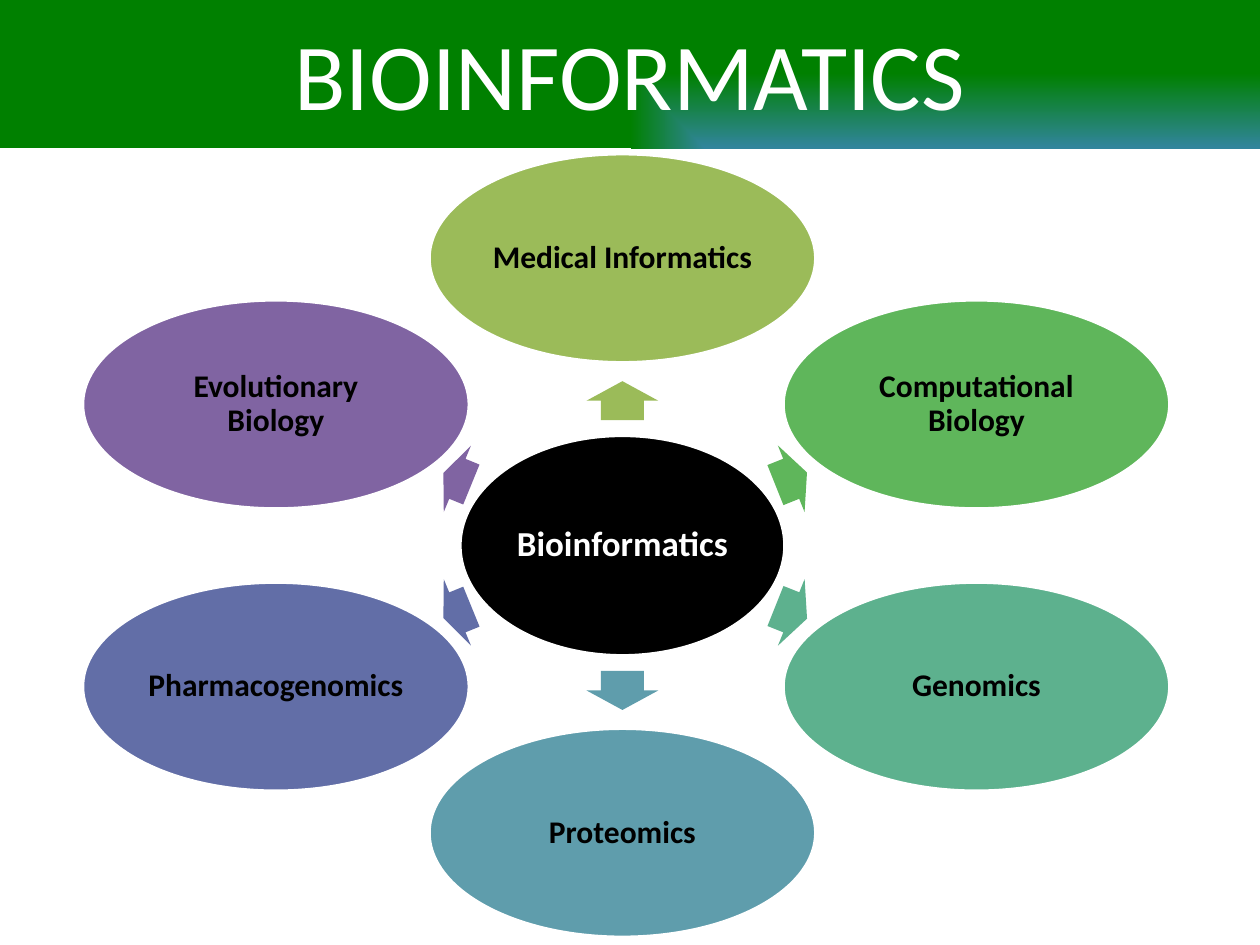
from dataclasses import dataclass

from lxml import etree
from pptx import Presentation
from pptx.dml.color import RGBColor
from pptx.enum.shapes import MSO_SHAPE
from pptx.enum.text import MSO_ANCHOR, PP_ALIGN
from pptx.oxml.ns import qn
from pptx.util import Inches, Pt

RECTANGLE = MSO_SHAPE.RECTANGLE
OVAL = MSO_SHAPE.OVAL
RIGHT_ARROW = MSO_SHAPE.RIGHT_ARROW
CENTER = PP_ALIGN.CENTER
MIDDLE = MSO_ANCHOR.MIDDLE


@dataclass(frozen=True)
class Theme:
    font: str = "Calibri"
    light: str = "FFFFFF"
    dark: str = "000000"
    banner_start: str = "31859C"
    banner_end: str = "008000"
    lime: str = "9BBB59"
    green: str = "5FB65B"
    mint: str = "5DB18E"
    teal: str = "5F9DAC"
    indigo: str = "626EA7"
    purple: str = "8064A2"
    title_size: int = 54
    hub_size: int = 20
    topic_size: int = 18
    outline: int = 2


class RadialSlide:
    """Draws a banner and a radial diagram on one slide in a shared theme."""

    def __init__(self, slide, theme):
        self.slide = slide
        self.theme = theme

    def shape(self, kind, center, size, color=None):
        left, top = (c - s / 2 for c, s in zip(center, size))
        shape = self.slide.shapes.add_shape(
            kind, Inches(left), Inches(top), Inches(size[0]), Inches(size[1]))
        shape.shadow.inherit = False
        shape.line.fill.background()
        if color:
            shape.fill.solid()
            shape.fill.fore_color.rgb = RGBColor.from_string(color)
        return shape

    def label(self, shape, text, size, color, bold=False):
        frame = shape.text_frame
        frame.text = text
        frame.word_wrap = True
        frame.vertical_anchor = MIDDLE
        paragraph = frame.paragraphs[0]
        paragraph.alignment = CENTER
        font = paragraph.runs[0].font
        font.name = self.theme.font
        font.size = Pt(size)
        font.bold = bold
        font.color.rgb = RGBColor.from_string(color)

    def banner(self, text, center, size):
        theme = self.theme
        banner = self.shape(RECTANGLE, center, size)
        banner.fill.gradient()
        colors = (theme.banner_start, theme.banner_end)
        for stop, color in zip(banner.fill.gradient_stops, colors):
            stop.color.rgb = RGBColor.from_string(color)
        gradient = banner._element.spPr.find(qn("a:gradFill"))
        gradient.remove(gradient.find(qn("a:lin")))
        corner = etree.SubElement(gradient, qn("a:path"), {"path": "rect"})
        etree.SubElement(corner, qn("a:fillToRect"), l="100000", t="100000")
        etree.SubElement(gradient, qn("a:tileRect"), r="-100000", b="-100000")
        self.label(banner, text, theme.title_size, theme.light)

    def bubble(self, text, center, size, fill, text_size, text_color):
        bubble = self.shape(OVAL, center, size, fill)
        bubble.line.color.rgb = RGBColor.from_string(self.theme.light)
        bubble.line.width = Pt(self.theme.outline)
        self.label(bubble, text, text_size, text_color, bold=True)
        frame = bubble.text_frame
        frame.margin_left = frame.margin_right = Inches(0.03)
        frame.margin_top = frame.margin_bottom = Inches(0.03)
        frame.paragraphs[0].line_spacing = 0.9

    def arrow(self, center, length, angle, color):
        arrow = self.shape(RIGHT_ARROW, center, (length, 0.57), color)
        arrow.adjustments[0] = 0.6
        arrow.adjustments[1] = 0.5
        arrow.rotation = angle


def main():
    theme = Theme()
    deck = Presentation()
    deck.slide_width, deck.slide_height = Inches(10), Inches(7.5)
    diagram = RadialSlide(deck.slides.add_slide(deck.slide_layouts[6]), theme)

    diagram.banner("BIOINFORMATICS", (5, 0.58), (10, 1.19))

    hub_x, hub_y = 4.94, 4.33
    diagram.bubble("Bioinformatics", (hub_x, hub_y), (2.58, 1.75),
                   theme.dark, theme.hub_size, theme.light)

    left, middle, right = (2.19, 3.63, 0.24), (hub_x, hub_x, 0.31), (7.75, 6.28, 0.27)
    pole, side = (2.28, 1.15), (1.12, 0.53)
    topics = [
        ("Medical Informatics", theme.lime, middle, pole, -1, 270),
        ("Computational Biology", theme.green, right, side, -1, 338.2),
        ("Genomics", theme.mint, right, side, 1, 21.8),
        ("Proteomics", theme.teal, middle, pole, 1, 90),
        ("Pharmacogenomics", theme.indigo, left, side, 1, 157.8),
        ("Evolutionary Biology", theme.purple, left, side, -1, 202.2),
    ]
    for topic, color, column, offsets, direction, angle in topics:
        topic_x, arrow_x, arrow_length = column
        topic_y, arrow_y = (hub_y + direction * offset for offset in offsets)
        diagram.arrow((arrow_x, arrow_y), arrow_length, angle, color)
        diagram.bubble(topic, (topic_x, topic_y), (3.07, 1.66),
                       color, theme.topic_size, theme.dark)

    deck.save("out.pptx")


if __name__ == "__main__":
    main()
